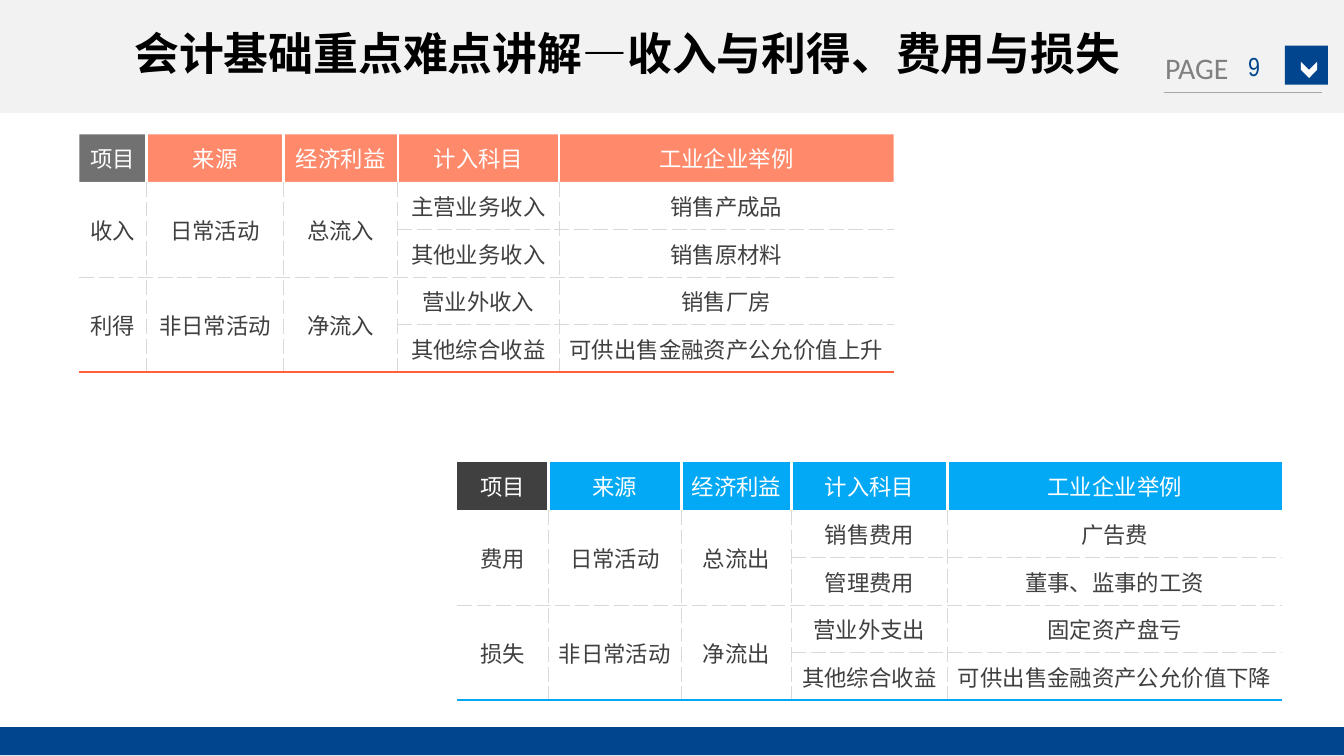
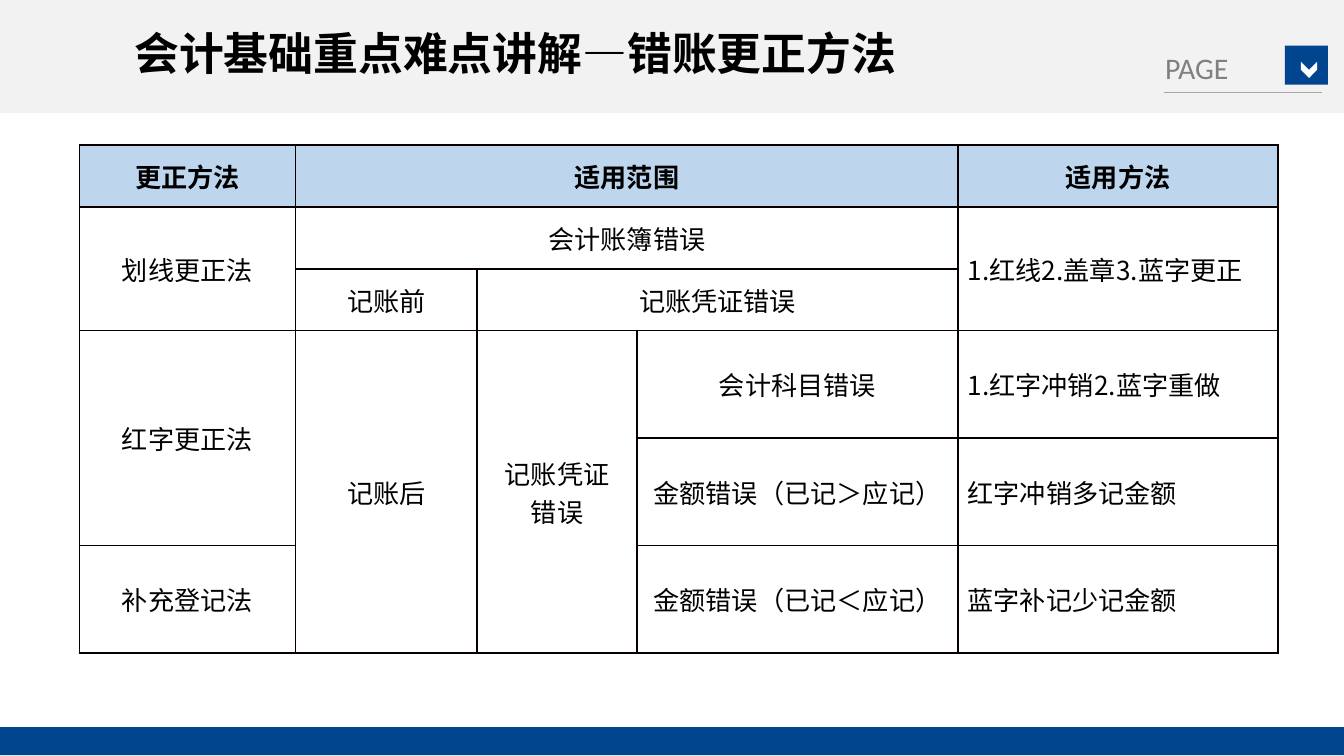
from pptx import Presentation
from pptx.dml.color import RGBColor
from pptx.enum import shapes, text
from pptx.oxml.ns import qn
from pptx.util import Inches, Pt
from lxml import etree

NAVY = RGBColor(0x01, 0x45, 0x8E)
BAND = RGBColor(0xF2, 0xF2, 0xF2)
GREY = RGBColor(0x80, 0x80, 0x80)
RULE = RGBColor(0xA6, 0xA6, 0xA6)
DASH = RGBColor(0xD9, 0xD9, 0xD9)
DARK = RGBColor(0x40, 0x40, 0x40)
ORANGE = RGBColor(0xFF, 0x62, 0x38)
BLUE = RGBColor(0x03, 0xA9, 0xF5)
PALE_BLUE = RGBColor(0xBD, 0xD6, 0xEE)
WHITE = RGBColor(0xFF, 0xFF, 0xFF)
BLACK = RGBColor(0, 0, 0)
GRID = RGBColor(0x08, 0, 0)

CJK = "Noto Sans CJK SC"
PLAIN_TABLE = "{2D5ABB26-0587-4C30-8999-92F81FD0307C}"
TITLE = "会计基础重点难点讲解—"
CENTER, LEFT = text.PP_ALIGN.CENTER, text.PP_ALIGN.LEFT

# Merged blocks are (first row, first column, last row, last column).
ITEM_MERGES = [(r, c, r + 1, c) for r in (1, 3) for c in range(3)]
ITEM_HEADER = ["项目", "来源", "经济利益", "计入科目", "工业企业举例"]
INCOME = [
    ITEM_HEADER,
    ["收入", "日常活动", "总流入", "主营业务收入", "销售产成品"],
    ["", "", "", "其他业务收入", "销售原材料"],
    ["利得", "非日常活动", "净流入", "营业外收入", "销售厂房"],
    ["", "", "", "其他综合收益", "可供出售金融资产公允价值上升"],
]
EXPENSE = [
    ITEM_HEADER,
    ["费用", "日常活动", "总流出", "销售费用", "广告费"],
    ["", "", "", "管理费用", "董事、监事的工资"],
    ["损失", "非日常活动", "净流出", "营业外支出", "固定资产盘亏"],
    ["", "", "", "其他综合收益", "可供出售金融资产公允价值下降"],
]
CORRECTION = [
    ["更正方法", "适用范围", "", "", "适用方法"],
    ["划线更正法", "会计账簿错误", "", "", "1.红线2.盖章3.蓝字更正"],
    ["", "记账前", "记账凭证错误", "", ""],
    ["红字更正法", "记账后", "记账凭证\n错误", "会计科目错误", "1.红字冲销2.蓝字重做"],
    ["", "", "", "金额错误（已记＞应记）", "红字冲销多记金额"],
    ["补充登记法", "", "", "金额错误（已记＜应记）", "蓝字补记少记金额"],
]
CORRECTION_MERGES = [(0, 1, 0, 3), (1, 0, 2, 0), (1, 1, 1, 3), (1, 4, 2, 4),
                     (2, 2, 2, 3), (3, 0, 4, 0), (3, 1, 5, 1), (3, 2, 5, 2)]


def box(x, y, w, h):
    return Inches(x), Inches(y), Inches(w), Inches(h)


def format_text(tf, size, color, font=CJK, bold=False, align=LEFT):
    for p in tf.paragraphs:
        p.alignment = align
        for r in p.runs:
            r.font.size, r.font.name, r.font.bold = Pt(size), font, bold
            r.font.color.rgb = color
            ea = etree.SubElement(r.font._element, qn("a:ea"))
            ea.set("typeface", font)


def add_block(slide, kind, place, color):
    sp = slide.shapes.add_shape(kind, *box(*place))
    sp.shadow.inherit = False
    sp.fill.solid()
    sp.fill.fore_color.rgb = color
    sp.line.fill.background()
    return sp


def add_text(slide, words, place, size, color, font, align=LEFT, wrap=True):
    sp = slide.shapes.add_textbox(*box(*place))
    tf = sp.text_frame
    tf.word_wrap = wrap
    tf.text = words
    format_text(tf, size, color, font, align=align)
    return sp


def add_frame(layout, slide):
    """Draw the bands and page marker, then hand them to the layout."""
    rect = shapes.MSO_SHAPE.RECTANGLE
    header = add_block(slide, rect, (0, 0, 10, 0.84), BAND)
    footer = add_block(slide, rect, (0, 5.41, 10, 0.21), NAVY)
    label = add_text(slide, "PAGE", (8.57, 0.32, 0.68, 0.37), 16, GREY,
                     "Calibri", wrap=False)
    button = add_block(slide, rect, (9.56, 0.34, 0.32, 0.29), NAVY)
    arrow = add_block(slide, shapes.MSO_SHAPE.CHEVRON,
                      (9.68, 0.46, 0.12, 0.12), WHITE)
    arrow.rotation = 90
    rule = slide.shapes.add_connector(shapes.MSO_CONNECTOR.STRAIGHT,
                                      *box(8.66, 0.69, 9.84, 0.69))
    rule.line.color.rgb = RULE
    rule.line.width = Pt(0.75)
    etree.SubElement(rule.element.spPr, qn("a:effectLst"))
    for i, sp in enumerate((header, footer, label, button, arrow, rule)):
        sp.element.xpath(".//p:cNvPr")[0].set("id", str(100 + i))
        layout.shapes.element.append(sp.element)


def add_slide(prs, layout, topic):
    s = prs.slides.add_slide(layout)
    title = s.shapes.title
    title.left, title.top, title.width, title.height = box(0.9, 0.14, 7.92, 0.5)
    tf = title.text_frame
    tf.text = TITLE + topic
    tf.word_wrap = True
    tf.auto_size = text.MSO_AUTO_SIZE.NONE
    tf.vertical_anchor = text.MSO_ANCHOR.TOP
    format_text(tf, 24, BLACK, bold=True)
    return s


def set_border(cell, sides, color, width, dash="solid"):
    """Draw the given sides, in the order L, R, T, B that the schema needs."""
    for side in sides:
        ln = etree.SubElement(cell._tc.get_or_add_tcPr(), qn("a:ln" + side))
        ln.set("w", str(Pt(width)))
        fill = etree.SubElement(ln, qn("a:solidFill"))
        etree.SubElement(fill, qn("a:srgbClr")).set("val", str(color))
        etree.SubElement(ln, qn("a:prstDash")).set("val", dash)


def fill_cell(cell, color, opacity=100):
    cell.fill.solid()
    cell.fill.fore_color.rgb = color
    if opacity < 100:
        clr = cell._tc.tcPr.xpath("./a:solidFill/a:srgbClr")[0]
        etree.SubElement(clr, qn("a:alpha")).set("val", str(opacity * 1000))


def add_grid(slide, x, y, widths, heights, rows, merges):
    """Add an unstyled table holding the rows and return it."""
    frame = slide.shapes.add_table(len(rows), len(widths),
                                   *box(x, y, sum(widths), sum(heights)))
    frame.element.xpath(".//a:tableStyleId")[0].text = PLAIN_TABLE
    table = frame.table
    table.first_row = table.horz_banding = False
    for column, w in zip(table.columns, widths):
        column.width = Inches(w)
    for row, h in zip(table.rows, heights):
        row.height = Inches(h)
    for r, row in enumerate(rows):
        for c, words in enumerate(row):
            cell = table.cell(r, c)
            cell.text = words
            cell.vertical_anchor = text.MSO_ANCHOR.MIDDLE
            cell.margin_left = cell.margin_right = Inches(0.07)
            cell.margin_top = cell.margin_bottom = 0
    for r, c, r2, c2 in merges:
        table.cell(r, c).merge(table.cell(r2, c2))
    return table


def add_item_table(slide, x, y, widths, rows, accent, opacity=100):
    n, last = len(rows), len(widths) - 1
    table = add_grid(slide, x, y, widths, [1.77 / n] * n, rows, ITEM_MERGES)
    for r in range(n):
        for c in range(last + 1):
            cell = table.cell(r, c)
            inner = ("L" if c > 0 else "") + ("R" if c < last else "")
            if r == 0:
                set_border(cell, inner, WHITE, 1.5)
                fill_cell(cell, accent if c else DARK, opacity)
                format_text(cell.text_frame, 12, WHITE, align=CENTER)
                continue
            set_border(cell, inner + ("T" if r > 1 else ""), DASH, 0.5, "dash")
            span = cell.span_height if cell.is_merge_origin else 1
            if r + span == n:
                set_border(cell, "B", accent, 1.5)
            else:
                set_border(cell, "B", DASH, 0.5, "dash")
            fill_cell(cell, WHITE, opacity)
            format_text(cell.text_frame, 12, DARK, align=CENTER)


def add_correction_table(slide):
    widths = [1.61, 1.35, 1.19, 2.39, 2.38]
    table = add_grid(slide, 0.59, 1.08, widths, [0.46] * 3 + [0.8] * 3,
                     CORRECTION, CORRECTION_MERGES)
    for r in range(len(CORRECTION)):
        for c in range(len(widths)):
            cell = table.cell(r, c)
            set_border(cell, "LRTB", GRID, 1)
            if r == 0:
                fill_cell(cell, PALE_BLUE)
            else:
                cell.fill.background()
            is_method = r > 0 and c == len(widths) - 1
            format_text(cell.text_frame, 14, BLACK, bold=r == 0,
                        align=LEFT if is_method else CENTER)


def main():
    prs = Presentation()
    prs.slide_width = Inches(10)
    prs.slide_height = prs.slide_width * 9 // 16
    layout = prs.slide_layouts[5]

    s = add_slide(prs, layout, "收入与利得、费用与损失")
    add_frame(layout, s)
    number = add_text(s, "9", (9.09, 0.34, 0.48, 0.3), 14, NAVY,
                      "Arial Narrow", CENTER)
    number.text_frame.vertical_anchor = text.MSO_ANCHOR.MIDDLE
    add_item_table(s, 0.59, 1, [0.5, 1.02, 0.85, 1.2, 2.49], INCOME, ORANGE, 74)
    add_item_table(s, 3.4, 3.44, [0.68, 0.99, 0.82, 1.16, 2.49], EXPENSE, BLUE)

    s = add_slide(prs, layout, "错账更正方法")
    add_correction_table(s)

    prs.save("out.pptx")


if __name__ == "__main__":
    main()
